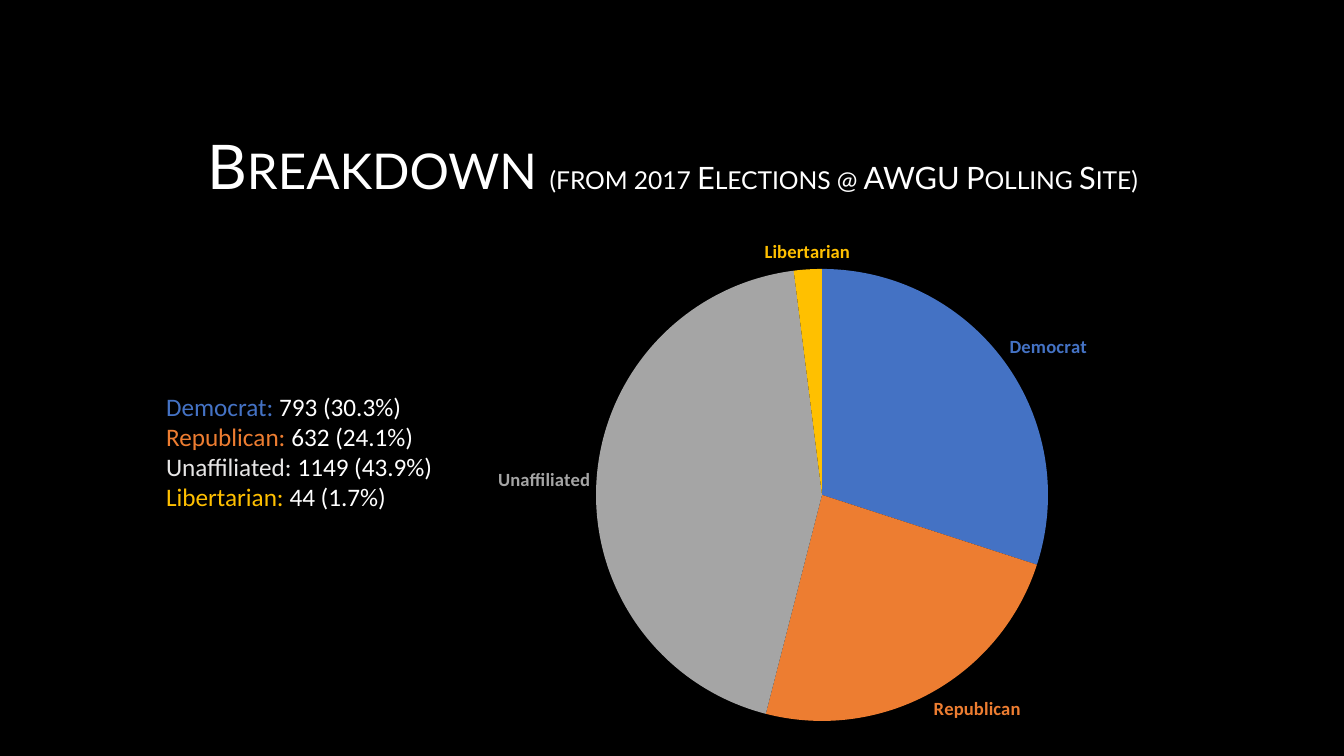
import dataclasses
import pptx
import pptx.chart.data
import pptx.dml.color
import pptx.enum.chart
import pptx.enum.text
import pptx.oxml
import pptx.oxml.ns
import pptx.util

SCALE = 914400 / 100.8


@dataclasses.dataclass(frozen=True)
class Theme:
    back: str = "000000"
    text: str = "FFFFFF"
    head: str = "Lato"
    body: str = "Calibri"
    big: int = 44
    sub: int = 22
    list: int = 18
    label: float = 13.3


THEME = Theme()

PARTIES = [
    ("Democrat", 793, 30.3, "4472C4", "4472C4"),
    ("Republican", 632, 24.1, "ED7D31", "ED7D31"),
    ("Unaffiliated", 1149, 43.9, "E7E6E6", "A5A5A5"),
    ("Libertarian", 44, 1.7, "FFC000", "FFC000"),
]


def px(count):
    return pptx.util.Emu(round(count * SCALE))


def color(code):
    return pptx.dml.color.RGBColor.from_string(code)


def place(shape, box):
    shape.left, shape.top, shape.width, shape.height = map(px, box)


def style(font, size, tint, face=THEME.body, bold=False):
    font.size = pptx.util.Pt(size)
    font.color.rgb = color(tint)
    font.name = face
    font.bold = bold


def write(line, text, caps=False, **form):
    run = line.add_run()
    run.text = text
    style(run.font, **form)
    if caps:
        run.font._element.set("cap", "small")


def add_title(slide, box):
    title = slide.shapes.title
    place(title, box)
    frame = title.text_frame
    frame.vertical_anchor = pptx.enum.text.MSO_ANCHOR.MIDDLE
    line = frame.paragraphs[0]
    line.alignment = pptx.enum.text.PP_ALIGN.CENTER
    line.line_spacing = 0.9
    form = dict(tint=THEME.text, face=THEME.head, caps=True)
    write(line, "Breakdown ", size=THEME.big, **form)
    write(line, "(from 2017 Elections @ AWGU Polling Site)", size=THEME.sub, **form)


def add_list(slide, box):
    body = slide.placeholders[1]
    place(body, box)
    frame = body.text_frame
    frame.word_wrap = False
    frame.auto_size = pptx.enum.text.MSO_AUTO_SIZE.SHAPE_TO_FIT_TEXT
    for index, (party, votes, share, tint, _) in enumerate(PARTIES):
        line = frame.add_paragraph() if index else frame.paragraphs[0]
        line.space_before = pptx.util.Pt(0)
        props = line._p.get_or_add_pPr()
        props.set("marL", "0")
        props.set("indent", "0")
        props.append(pptx.oxml.parse_xml(
            f'<a:buNone {pptx.oxml.ns.nsdecls("a")}/>'))
        write(line, f"{party}: ", size=THEME.list, tint=tint)
        write(line, f"{votes} ({share}%)", size=THEME.list, tint=THEME.text)


def set_plot(chart, box, plot):
    left, top, width, height = box
    spots = {
        "x": (plot[0] - left) / width,
        "y": (plot[1] - top) / height,
        "w": plot[2] / width,
        "h": plot[3] / height,
    }
    modes = '<c:layoutTarget val="inner"/><c:xMode val="edge"/><c:yMode val="edge"/>'
    sizes = "".join(f'<c:{key} val="{spot:.4f}"/>' for key, spot in spots.items())
    area = chart._chartSpace.chart.plotArea
    for old in area.findall(pptx.oxml.ns.qn("c:layout")):
        area.remove(old)
    area.insert(0, pptx.oxml.parse_xml(
        f'<c:layout {pptx.oxml.ns.nsdecls("c")}>'
        f"<c:manualLayout>{modes}{sizes}</c:manualLayout></c:layout>"))


def add_pie(slide, box, plot):
    data = pptx.chart.data.CategoryChartData()
    data.categories = [party[0] for party in PARTIES]
    data.add_series("Share", [round(party[2]) for party in PARTIES])
    chart = slide.shapes.add_chart(
        pptx.enum.chart.XL_CHART_TYPE.PIE, *map(px, box), data).chart
    chart.has_title = False
    chart.has_legend = False
    style(chart.font, THEME.label, THEME.text)
    pie = chart.plots[0]
    pie.vary_by_categories = True
    pie.has_data_labels = True
    labels = pie.data_labels
    labels.show_category_name = True
    labels.show_value = False
    labels.show_percentage = False
    labels.position = pptx.enum.chart.XL_LABEL_POSITION.OUTSIDE_END
    for index, party in enumerate(PARTIES):
        point = pie.series[0].points[index]
        point.format.fill.solid()
        point.format.fill.fore_color.rgb = color(party[4])
        point.format.line.fill.background()
        label = point.data_label
        style(label.font, THEME.label, party[4], bold=True)
        label.position = pptx.enum.chart.XL_LABEL_POSITION.OUTSIDE_END
        mark = label._dLbl
        for tag, shown in (("c:showCatName", "1"), ("c:showVal", "0"),
                           ("c:showPercent", "0")):
            mark.find(pptx.oxml.ns.qn(tag)).set("val", shown)
    set_plot(chart, box, plot)


def main():
    deck = pptx.Presentation()
    deck.slide_width, deck.slide_height = px(1344), px(756)
    slide = deck.slides.add_slide(deck.slide_layouts[1])
    slide.background.fill.solid()
    slide.background.fill.fore_color.rgb = color(THEME.back)
    add_title(slide, (93, 129, 1159, 81))
    add_list(slide, (156, 386, 290, 132))
    add_pie(slide, (356, 153, 896, 598), (596, 269, 452, 452))
    deck.save("out.pptx")


if __name__ == "__main__":
    main()
